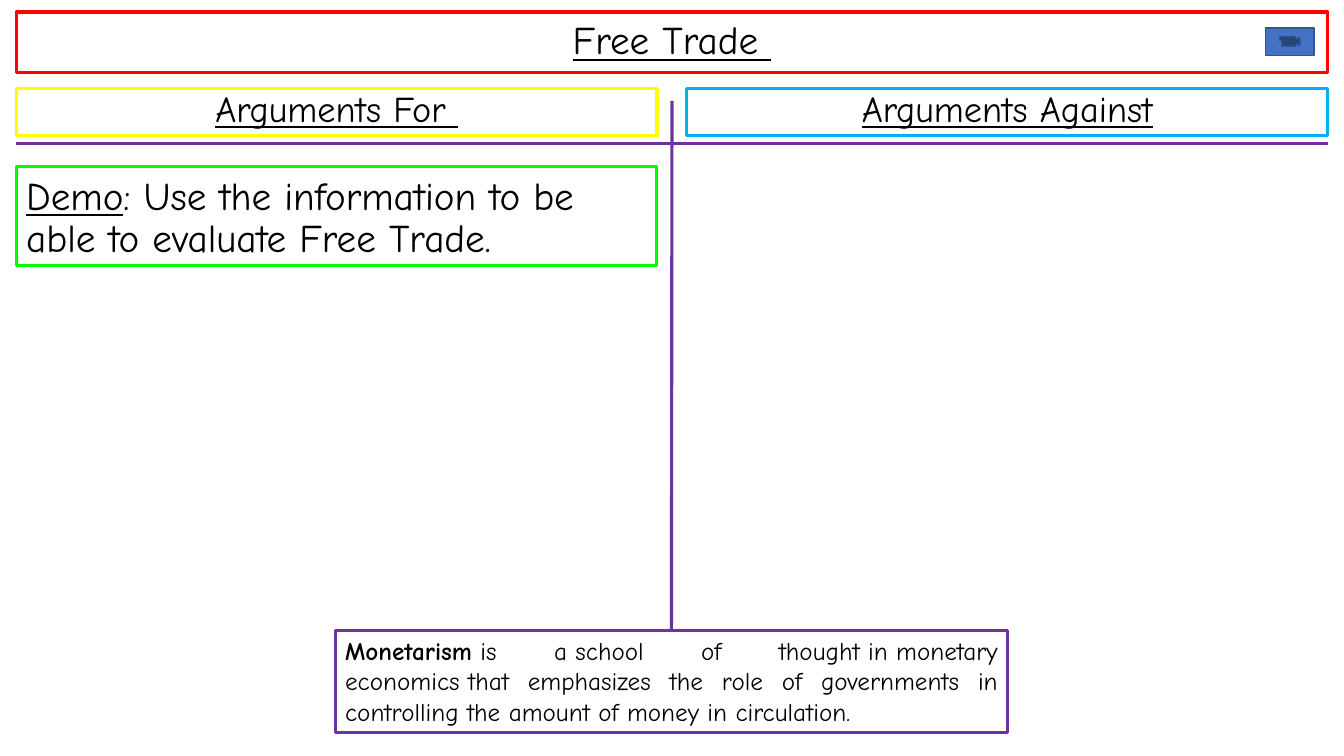
import pptx
import pptx.util
import pptx.dml.color
import pptx.enum.shapes
import pptx.enum.text
import pptx.oxml.ns
from lxml import etree

Pt = pptx.util.Pt
ALIGN = pptx.enum.text.PP_ALIGN
ANCHOR = pptx.enum.text.MSO_ANCHOR
FIT = pptx.enum.text.MSO_AUTO_SIZE

# Content: runs are (text, style); "~" stands for a no-break space
FONT = "Comic Neue"
NO_BREAK_SPACE = chr(160)
TITLE = [("Free Trade ", "underline")]
ARGUMENTS = [("Arguments For ", "FFFF00"), ("Arguments Against", "00B0F0")]
DEMO = [("Demo", "underline"),
        (": Use the information to be able to evaluate Free Trade.", "")]
DEFINITION = [("Monetarism", "bold"),
              ("~is a~school of thought~in~monetary economics~that emphasizes "
               "the role of governments in controlling the amount of~"
               "money in circulation.~", "")]
PURPLE = "7030A0"

# Layout in points
WIDTH, HEIGHT = 960, 540
MARGIN = 11.6
RIGHT = WIDTH - MARGIN
COLUMN_WIDTH = 457.8
COLUMN_LEFTS = [MARGIN, RIGHT - COLUMN_WIDTH]
DIVIDER_Y = 102.8
DEFINITION_WIDTH = 480.4
DEFINITION_BOX = (239.4, 450.3, DEFINITION_WIDTH, 72.7)


def color(value):
    return pptx.dml.color.RGBColor.from_string(value)


def outline(item, value, width=2.25):
    item.line.color.rgb = color(value)
    item.line.width = Pt(width)


def add_rectangle(box, kind=pptx.enum.shapes.MSO_SHAPE.RECTANGLE):
    shape = slide.shapes.add_shape(kind, *map(Pt, box))
    shape.shadow.inherit = False
    return shape


def write(shape, runs, line_color, size, align, anchor, spacing, fit=FIT.NONE):
    shape.fill.background()
    outline(shape, line_color)
    frame = shape.text_frame
    frame.word_wrap = True
    frame.auto_size = fit
    frame.vertical_anchor = anchor
    paragraph = frame.paragraphs[0]
    paragraph.alignment = align
    paragraph.line_spacing = spacing
    paragraph.space_before = Pt(0)
    paragraph.font.name = FONT
    paragraph.font.size = Pt(size)
    paragraph.font.color.rgb = color("000000")
    for text, style in runs:
        run = paragraph.add_run()
        run.text = text.replace("~", NO_BREAK_SPACE)
        run.font.name = FONT
        run.font.size = Pt(size)
        run.font.color.rgb = color("000000")
        run.font.underline = style == "underline"
        run.font.bold = style == "bold"


def add_line(start, end):
    line = slide.shapes.add_connector(
        pptx.enum.shapes.MSO_CONNECTOR.STRAIGHT, *map(Pt, start + end))
    outline(line, PURPLE)
    properties = line._element.spPr
    etree.SubElement(properties, pptx.oxml.ns.qn("a:effectLst"))
    return line


presentation = pptx.Presentation()
presentation.slide_width, presentation.slide_height = Pt(WIDTH), Pt(HEIGHT)
slide = presentation.slides.add_slide(presentation.slide_layouts[5])

# Title
title = slide.shapes.title
title.left, title.top = Pt(MARGIN), Pt(8.6)
title.width, title.height = Pt(RIGHT - MARGIN), Pt(43.2)
write(title, TITLE, "FF0000", 28, ALIGN.CENTER, ANCHOR.MIDDLE, 0.9)

# Movie button
button = add_rectangle((903.9, 20, 34.8, 19.5),
                       pptx.enum.shapes.MSO_SHAPE.ACTION_BUTTON_MOVIE)
button.fill.solid()
button.fill.fore_color.rgb = color("4472C4")
outline(button, "325491", 1)

# Definition
definition = add_rectangle(DEFINITION_BOX)
write(definition, DEFINITION, PURPLE, 18, ALIGN.JUSTIFY, ANCHOR.TOP, 1.0,
      FIT.SHAPE_TO_FIT_TEXT)

# Dividers
divider = add_line((WIDTH / 2, 72),
                   (DEFINITION_BOX[0] + DEFINITION_WIDTH / 2, DEFINITION_BOX[1]))
divider.end_connect(definition, 0)
add_line((RIGHT, DIVIDER_Y), (MARGIN, DIVIDER_Y))

# Column headings
for left, (heading, line_color) in zip(COLUMN_LEFTS, ARGUMENTS):
    write(add_rectangle((left, 63.3, COLUMN_WIDTH, 33.8)),
          [(heading, "underline")], line_color, 25.9,
          ALIGN.CENTER, ANCHOR.MIDDLE, 0.8)

# Demo task
write(add_rectangle((MARGIN, 118.7, 457.3, 71.2)), DEMO, "00FA00", 28,
      ALIGN.LEFT, ANCHOR.BOTTOM, 0.9)

presentation.save("out.pptx")
